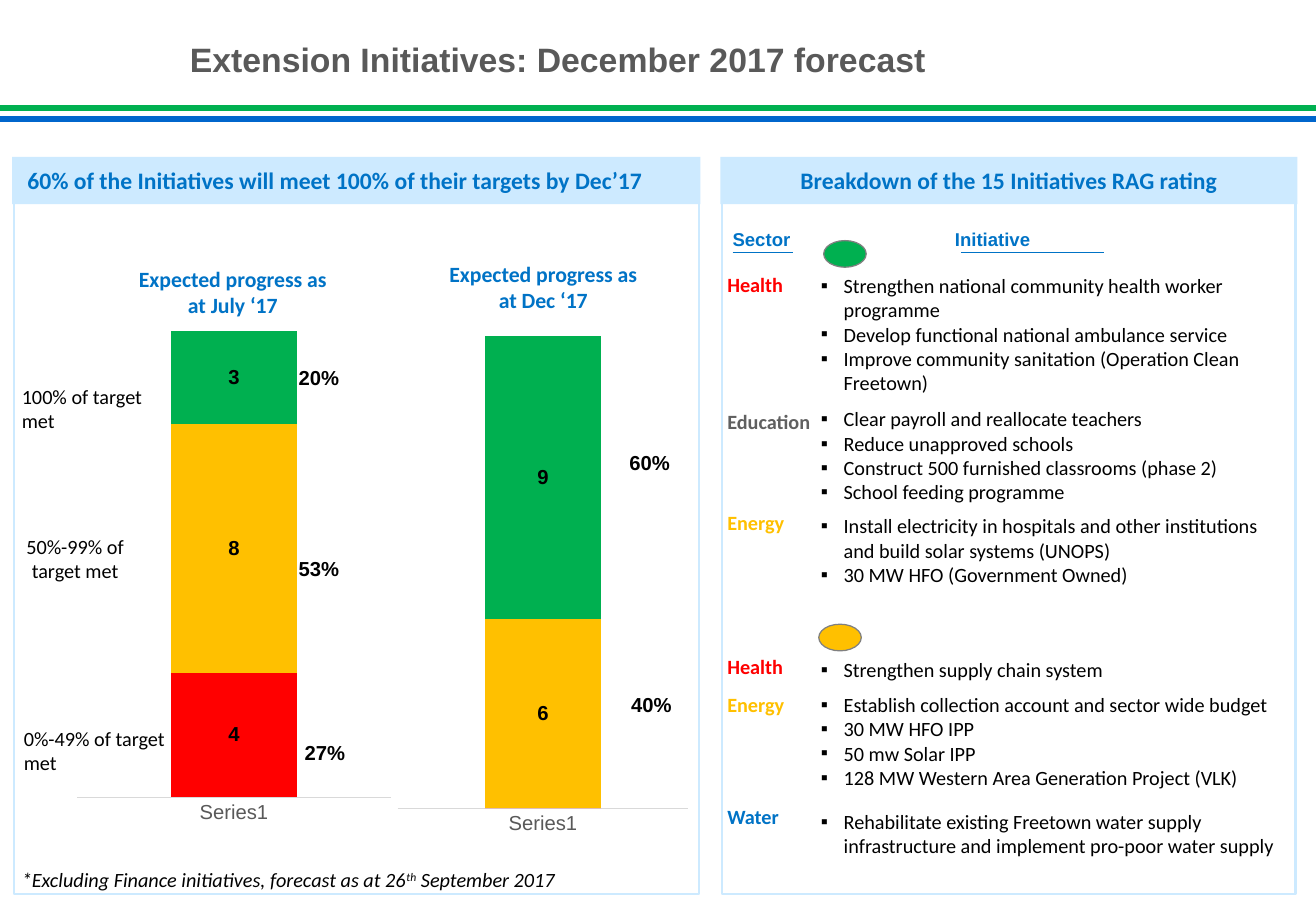
"""Build the Extension Initiatives forecast slide."""
from dataclasses import dataclass
from typing import NamedTuple

import lxml.etree
import pptx
import pptx.chart.data
import pptx.dml.color
import pptx.enum.chart
import pptx.enum.shapes
import pptx.enum.text
import pptx.oxml.ns
import pptx.util

Pt = pptx.util.Pt
qn = pptx.oxml.ns.qn
Align = pptx.enum.text.PP_ALIGN
Anchor = pptx.enum.text.MSO_ANCHOR
Shape = pptx.enum.shapes.MSO_SHAPE


@dataclass(frozen=True)
class Theme:
    red: str = "FF0000"
    amber: str = "FFC000"
    green: str = "00B050"
    blue: str = "0073C6"
    rule_blue: str = "0066CC"
    pale: str = "CDEAFF"
    grey: str = "595959"
    education: str = "606060"
    outline: str = "808080"
    axis: str = "D9D9D9"
    black: str = "000000"
    body_font: str = "Calibri"
    head_font: str = "Arial"
    title: float = 20
    panel: float = 14
    chart_title: float = 12.9
    body: float = 12
    column: float = 11


T = Theme()


class Box(NamedTuple):
    x: float
    y: float
    w: float
    h: float


class Panel(NamedTuple):
    x: float
    w: float
    heading: str
    align: Align


class Progress(NamedTuple):
    title: str
    title_box: Box
    x: float
    plot: Box
    values: tuple[int, int, int]
    shares: tuple[tuple[str, float, float], ...]


class Sector(NamedTuple):
    name: str
    color: str
    y: float
    list_y: float
    list_w: float
    items: tuple[str, ...]


PANELS = (
    Panel(7.2, 408, "60% of the Initiatives will meet 100% of their targets by Dec’17", Align.LEFT),
    Panel(427, 342, "Breakdown of the 15 Initiatives RAG rating", Align.CENTER),
)
CHARTS = (
    Progress("Expected progress as at July ‘17", Box(70, 154, 136, 39), 41.8,
             Box(0.02, 0.08, 0.96, 0.85), (4, 8, 3),
             (("20%", 170, 213), ("53%", 170, 326), ("27%", 173.5, 435))),
    Progress("Expected progress as at Dec ‘17", Box(259, 151, 126, 39), 226,
             Box(0.05, 0.09, 0.89, 0.86), (0, 6, 9),
             (("60%", 366, 263.5), ("40%", 367, 407))),
)
BANDS = (
    ("100% of target met", Box(5.8, 224, 104, 36), Align.LEFT),
    ("0%-49% of target met", Box(7, 427, 118, 36), Align.LEFT),
    ("50%-99% of target met", Box(-5, 313, 99, 36), Align.CENTER),
)
SECTORS = (
    Sector("Health", T.red, 157.7, 158.4, 294,
           ("Strengthen national community health worker programme",
            "Develop functional national ambulance service",
            "Improve community sanitation (Operation Clean Freetown)")),
    Sector("Education", T.education, 239, 237.6, 294,
           ("Clear payroll and reallocate teachers", "Reduce unapproved schools",
            "Construct 500 furnished classrooms (phase 2)", "School feeding programme")),
    Sector("Energy", T.amber, 298.8, 301, 274,
           ("Install electricity in hospitals and other institutions and build solar systems (UNOPS)",
            "30 MW HFO (Government Owned)")),
    Sector("Health", T.red, 384.5, 386, 274, ("Strengthen supply chain system",)),
    Sector("Energy", T.amber, 406.8, 406.8, 294,
           ("Establish collection account and sector wide budget", "30 MW HFO IPP",
            "50 mw Solar IPP", "128 MW Western Area Generation Project (VLK)")),
    Sector("Water", T.blue, 473, 476, 288,
           ("Rehabilitate existing Freetown water supply infrastructure and implement "
            "pro-poor water supply",)),
)
COLUMNS = (("Sector", 434.2, 434.2, 470.2), ("Initiative", 566, 569.5, 654.5))
RATINGS = ((T.green, 488.2, 142.6), (T.amber, 485.3, 370))


def rgb(color: str) -> pptx.dml.color.RGBColor:
    return pptx.dml.color.RGBColor.from_string(color)


def style(font, size: float = T.body, color: str = T.black, name: str = T.body_font,
          bold: bool = False, italic: bool = False) -> None:
    font.size, font.name, font.bold, font.italic = Pt(size), name, bold, italic
    font.color.rgb = rgb(color)


def add_run(p, text: str, *, raised: bool = False, **fmt) -> None:
    r = p.add_run()
    r.text = text
    style(r.font, **fmt)
    if raised:
        r._r.get_or_add_rPr().set("baseline", "30000")


def add_bullet(p) -> None:
    pPr = p._p.get_or_add_pPr()
    pPr.set("marL", str(Pt(13.5)))
    pPr.set("indent", str(-Pt(13.5)))
    lxml.etree.SubElement(pPr, qn("a:buFont")).set("typeface", T.head_font)
    lxml.etree.SubElement(pPr, qn("a:buChar")).set("char", "▪")


def fill_frame(tf, text: str, *, align: Align = Align.LEFT, anchor: Anchor = Anchor.TOP,
               insets: tuple[float, float, float, float] = (7.2, 3.6, 7.2, 3.6),
               bullets: bool = False, **fmt) -> None:
    tf.word_wrap, tf.vertical_anchor = True, anchor
    tf.auto_size = pptx.enum.text.MSO_AUTO_SIZE.NONE
    tf.margin_left, tf.margin_top, tf.margin_right, tf.margin_bottom = map(Pt, insets)
    for i, line in enumerate(text.split("\n")):
        p = tf.add_paragraph() if i else tf.paragraphs[0]
        p.alignment = align
        if bullets:
            add_bullet(p)
        add_run(p, line, **fmt)


def add_text(s, text: str, box: Box, **fmt):
    tf = s.shapes.add_textbox(*map(Pt, box)).text_frame
    fill_frame(tf, text, **fmt)
    return tf


def add_shape(s, kind: Shape, box: Box, fill: str = "", line: str = "", width: float = 0.75):
    sp = s.shapes.add_shape(kind, *map(Pt, box))
    sp.shadow.inherit = False
    if fill:
        sp.fill.solid()
        sp.fill.fore_color.rgb = rgb(fill)
    else:
        sp.fill.background()
    if line:
        sp.line.color.rgb, sp.line.width = rgb(line), Pt(width)
    else:
        sp.line.fill.background()
    return sp


def add_rule(s, x1: float, x2: float, y: float, color: str, width: float) -> None:
    cx = s.shapes.add_connector(pptx.enum.shapes.MSO_CONNECTOR.STRAIGHT, Pt(x1), Pt(y), Pt(x2), Pt(y))
    cx.line.color.rgb, cx.line.width = rgb(color), Pt(width)
    lxml.etree.SubElement(cx._element.spPr, qn("a:effectLst"))


def add_panel(s, panel: Panel) -> None:
    add_shape(s, Shape.RECTANGLE, Box(panel.x + 1, 119.5, panel.w - 2, 410.5), line=T.pale, width=1.5)
    sp = add_shape(s, Shape.RECTANGLE, Box(panel.x, 93, panel.w, 28), fill=T.pale)
    fill_frame(sp.text_frame, panel.heading, align=panel.align, anchor=Anchor.MIDDLE,
               insets=(9, 5.8, 9, 5.8), size=T.panel, color=T.blue, bold=True)


def set_plot(chart, plot: Box) -> None:
    area = chart._chartSpace.chart.plotArea
    for old in area.findall(qn("c:layout")):
        area.remove(old)
    layout = lxml.etree.Element(qn("c:layout"))
    manual = lxml.etree.SubElement(layout, qn("c:manualLayout"))
    settings = [("layoutTarget", "inner"), ("xMode", "edge"), ("yMode", "edge"), *zip("xywh", plot)]
    for tag, val in settings:
        lxml.etree.SubElement(manual, qn(f"c:{tag}")).set("val", str(val))
    area.insert(0, layout)


def add_progress(s, prog: Progress) -> None:
    data = pptx.chart.data.CategoryChartData()
    data.categories = ["Series1"]
    for i, value in enumerate(prog.values, 1):
        data.add_series(f"Series {i}", [value])
    frame = Box(prog.x, 170, 193.7, 325.4)
    chart = s.shapes.add_chart(pptx.enum.chart.XL_CHART_TYPE.COLUMN_STACKED, *map(Pt, frame), data).chart
    chart.has_title = chart.has_legend = False
    style(chart.font, size=10, name=T.head_font)
    plot = chart.plots[0]
    plot.gap_width, plot.overlap, plot.vary_by_categories = 150, 100, False
    for series, color, value in zip(plot.series, (T.red, T.amber, T.green), prog.values):
        series.format.fill.solid()
        series.format.fill.fore_color.rgb = rgb(color)
        if value:
            labels = series.data_labels
            labels.show_value = True
            labels.position = pptx.enum.chart.XL_LABEL_POSITION.CENTER
            style(labels.font, name=T.head_font, bold=True)
    axis = chart.value_axis
    axis.minimum_scale, axis.maximum_scale = 0, sum(prog.values)
    axis.has_major_gridlines = axis.visible = False
    cat = chart.category_axis
    cat.major_tick_mark = pptx.enum.chart.XL_TICK_MARK.NONE
    cat.format.line.color.rgb, cat.format.line.width = rgb(T.axis), Pt(0.75)
    style(cat.tick_labels.font, color=T.grey, name=T.head_font)
    set_plot(chart, prog.plot)
    add_text(s, prog.title, prog.title_box, align=Align.CENTER, size=T.chart_title, color=T.blue, bold=True)
    for share, x, y in prog.shares:
        add_text(s, share, Box(x, y, 45, 21.6), name=T.head_font, bold=True)


def add_sector(s, sector: Sector) -> None:
    add_text(s, sector.name, Box(424, sector.y, 77, 21.6), color=sector.color, bold=True)
    height = 7.2 + 14.6 * len(sector.items)
    add_text(s, "\n".join(sector.items), Box(479.5, sector.list_y, sector.list_w, height), bullets=True)


def main() -> None:
    prs = pptx.Presentation()
    prs.slide_width, prs.slide_height = Pt(780), Pt(540)
    s = prs.slides.add_slide(prs.slide_layouts[5])
    title = s.shapes.title
    title.left, title.top, title.width, title.height = map(Pt, Box(112.5, 22.3, 643.7, 24.5))
    fill_frame(title.text_frame, "Extension Initiatives: December 2017 forecast", anchor=Anchor.BOTTOM,
               insets=(0, 0, 0, 0), size=T.title, color=T.grey, name=T.head_font, bold=True)
    for y, color in ((64, T.green), (70.5, T.rule_blue)):
        add_rule(s, 0, 780, y, color, 3.75)
    for panel in PANELS:
        add_panel(s, panel)
    for prog in CHARTS:
        add_progress(s, prog)
    for text, box, align in BANDS:
        add_text(s, text, box, align=align)
    for text, x, x1, x2 in COLUMNS:
        add_text(s, text, Box(x, 135.4, 113, 14.4), anchor=Anchor.BOTTOM, insets=(0, 0, 0, 1.4),
                 size=T.column, color=T.blue, name=T.head_font, bold=True)
        add_rule(s, x1, x2, 149.8, T.blue, 0.75)
    for color, x, y in RATINGS:
        add_shape(s, Shape.OVAL, Box(x, y, 25.2, 15.8), fill=color, line=T.outline)
    for sector in SECTORS:
        add_sector(s, sector)
    tf = add_text(s, "*Excluding Finance initiatives, forecast as at 26", Box(5.8, 510.5, 350, 21.6), italic=True)
    add_run(tf.paragraphs[0], "th", raised=True, italic=True)
    add_run(tf.paragraphs[0], " September 2017", italic=True)
    prs.save("out.pptx")


if __name__ == "__main__":
    main()
